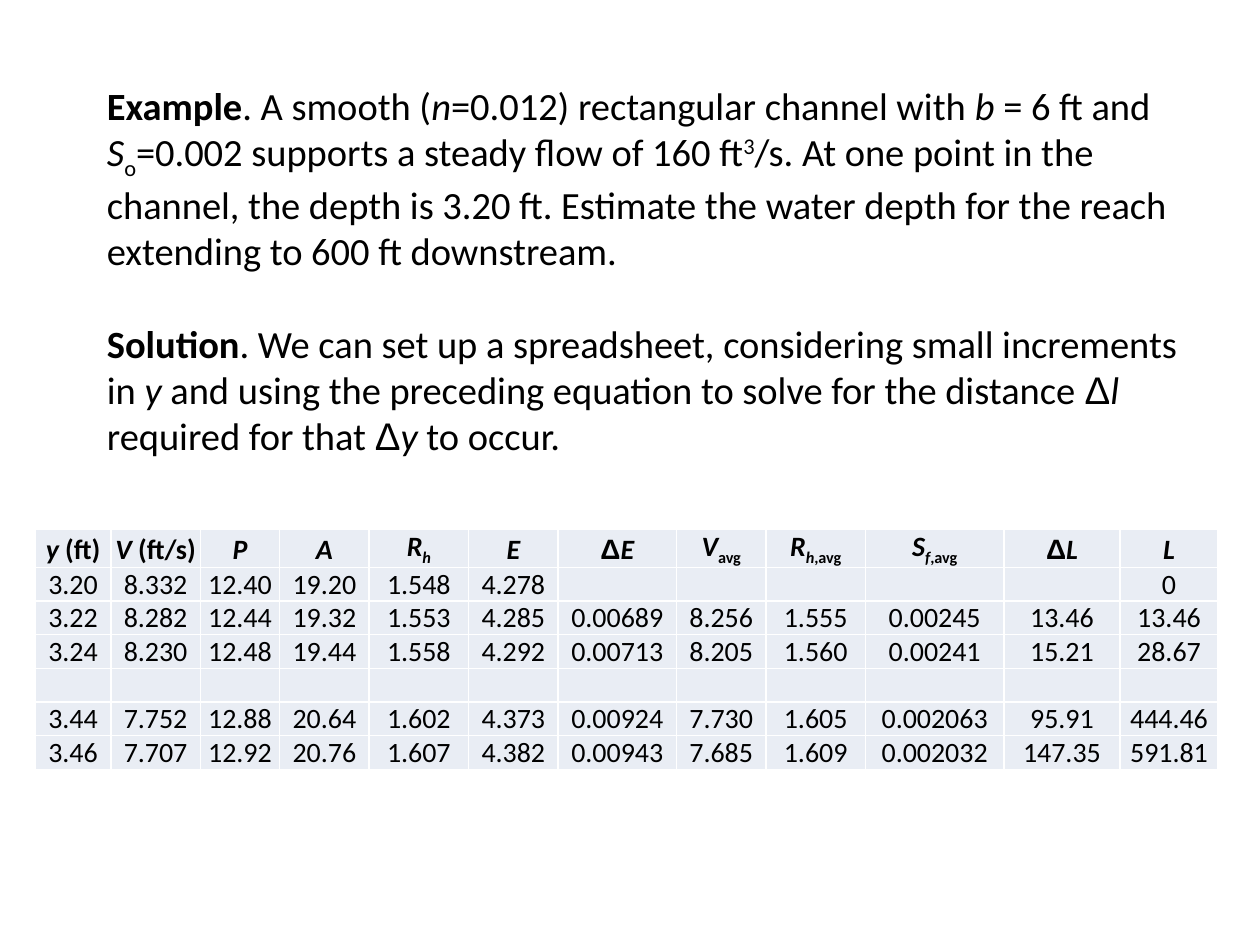
from lxml import etree
from pptx import Presentation
from pptx.dml import color
from pptx.enum import text
from pptx.oxml import ns
from pptx.util import Inches, Pt

COLORS = {"ink": "000000", "cell": "E9EDF4", "rule": "FFFFFF"}
ITALIC = {"italic": True}
SUB = {"base": -25}
SUP = {"base": 30}
DELTA = ("Δ", {"font": "Arial"})


def rgb(name):
    return color.RGBColor.from_string(COLORS[name])


def child(parent, tag, **attrs):
    return etree.SubElement(parent, ns.qn(tag), attrs)


def add_run(p, content, size=16, bold=False, italic=False, base=0, font="Calibri"):
    r = p.add_run()
    r.text = content
    r.font.size = Pt(size)
    r.font.bold = bold
    r.font.italic = italic
    r.font.name = font
    r.font.color.rgb = rgb("ink")
    if base:
        r.font._element.set("baseline", str(base * 1000))


class SlideBuilder:
    body_size = 22
    table_size = 16

    def __init__(self, slide):
        self.slide = slide

    def paragraph(self, left, top, width, height, title, runs):
        sp = self.slide.shapes.add_textbox(
            Inches(left), Inches(top), Inches(width), Inches(height))
        tf = sp.text_frame
        tf.word_wrap = True
        p = tf.paragraphs[0]
        p.space_before = Pt(0)
        p.space_after = Pt(12)
        before = p._p.pPr.find(ns.qn("a:spcBef"))
        before.remove(before[0])
        child(before, "a:spcPct", val="20000")
        add_run(p, title, size=self.body_size, bold=True)
        for content, style in runs:
            add_run(p, content, size=self.body_size, **style)

    def table(self, left, top, widths, row_height, header, rows):
        frame = self.slide.shapes.add_table(
            len(rows) + 1, len(widths), Inches(left), Inches(top),
            Inches(sum(widths)), Inches(row_height * (len(rows) + 1)))
        table = frame.table
        table.first_row = False
        table.horz_banding = False
        for column, width in zip(table.columns, widths):
            column.width = Inches(width)
        for row in table.rows:
            row.height = Inches(row_height)
        for c, runs in enumerate(header):
            self.cell(table.cell(0, c), runs, bold=True)
        for r, values in enumerate(rows, 1):
            for c, value in enumerate(values):
                self.cell(table.cell(r, c), [(value, {})] if value else [])

    def cell(self, cell, runs, bold=False):
        cell.margin_left = cell.margin_right = 0
        cell.margin_top = cell.margin_bottom = 0
        cell.vertical_anchor = text.MSO_ANCHOR.BOTTOM
        for side in "LRTB":
            line = child(cell._tc.tcPr, f"a:ln{side}", w=str(Pt(1)))
            child(child(line, "a:solidFill"), "a:srgbClr", val=COLORS["rule"])
        cell.fill.solid()
        cell.fill.fore_color.rgb = rgb("cell")
        p = cell.text_frame.paragraphs[0]
        p.alignment = text.PP_ALIGN.CENTER
        for content, style in runs:
            add_run(p, content, size=self.table_size, bold=bold, **style)
        if not runs:
            child(p._p, "a:endParaRPr", sz=str(self.table_size * 100))


EXAMPLE = [
    (". A smooth (", {}), ("n", ITALIC),
    ("=0.012) rectangular channel with ", {}), ("b", ITALIC),
    (" = 6 ft and ", {}), ("S", ITALIC), ("o", SUB),
    ("=0.002 supports a steady flow of 160 ft", {}), ("3", SUP),
    ("/s. At one point in the channel, the depth is 3.20 ft. Estimate the "
     "water depth for the reach extending to 600 ft downstream.", {}),
]
SOLUTION = [
    (". We can set up a spreadsheet, considering small increments in ", {}),
    ("y", ITALIC),
    (" and using the preceding equation to solve for the distance ", {}),
    DELTA, ("l", ITALIC), (" required for that ", {}),
    DELTA, ("y", ITALIC), (" to occur.", {}),
]
AVG = (",avg", SUB)
HEADER = [
    [("y", ITALIC), (" (ft)", {})],
    [("V", ITALIC), (" (ft/s)", {})],
    [("P", ITALIC)],
    [("A", ITALIC)],
    [("R", ITALIC), ("h", ITALIC | SUB)],
    [("E", ITALIC)],
    [DELTA, ("E", ITALIC)],
    [("V", ITALIC), ("avg", SUB)],
    [("R", ITALIC), ("h", ITALIC | SUB), AVG],
    [("S", ITALIC), ("f", ITALIC | SUB), AVG],
    [DELTA, ("L", ITALIC)],
    [("L", ITALIC)],
]
WIDTHS = [0.6, 0.71, 0.63, 0.71, 0.79, 0.71, 0.94, 0.71, 0.79, 1.1, 0.92, 0.78]
ROWS = [
    ["3.20", "8.332", "12.40", "19.20", "1.548", "4.278", *[""] * 5, "0"],
    ["3.22", "8.282", "12.44", "19.32", "1.553", "4.285",
     "0.00689", "8.256", "1.555", "0.00245", "13.46", "13.46"],
    ["3.24", "8.230", "12.48", "19.44", "1.558", "4.292",
     "0.00713", "8.205", "1.560", "0.00241", "15.21", "28.67"],
    [""] * len(WIDTHS),
    ["3.44", "7.752", "12.88", "20.64", "1.602", "4.373",
     "0.00924", "7.730", "1.605", "0.002063", "95.91", "444.46"],
    ["3.46", "7.707", "12.92", "20.76", "1.607", "4.382",
     "0.00943", "7.685", "1.609", "0.002032", "147.35", "591.81"],
]


def main():
    prs = Presentation()
    prs.slide_width = Inches(10)
    prs.slide_height = Inches(7.5)
    builder = SlideBuilder(prs.slides.add_slide(prs.slide_layouts[6]))
    builder.paragraph(0.75, 0.6, 8.79, 1.69, "Example", EXAMPLE)
    builder.paragraph(0.75, 2.49, 8.79, 1.42, "Solution", SOLUTION)
    builder.table(0.28, 4.2, WIDTHS, 0.21, HEADER, ROWS)
    prs.save("out.pptx")


if __name__ == "__main__":
    main()
